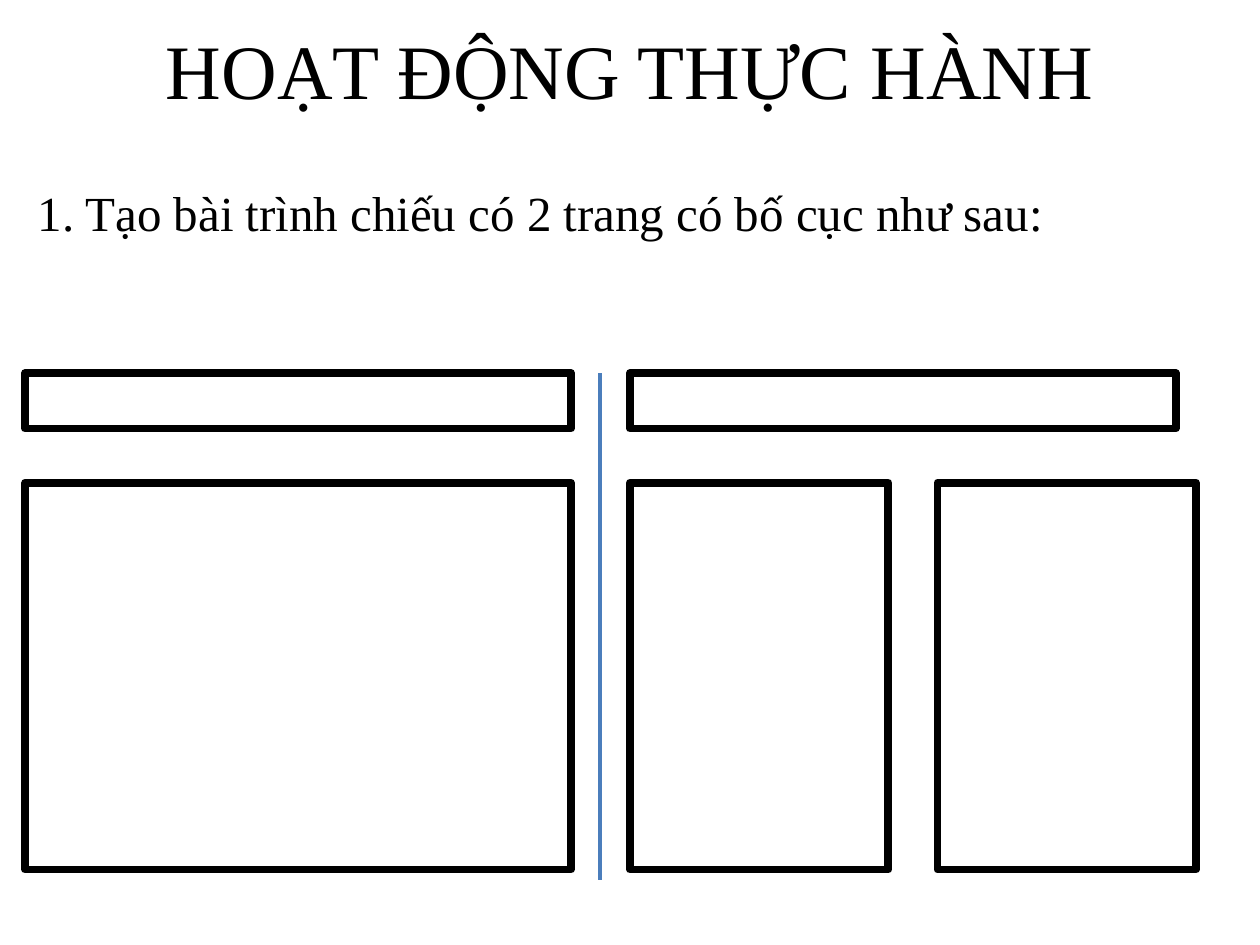
"""Build the practice slide that shows two page layouts side by side."""
from lxml import etree
from pptx import Presentation
from pptx.dml.color import RGBColor
from pptx.enum import shapes, text
from pptx.oxml import ns
from pptx.util import Cm, Pt

COLOURS = {"ink": "000000", "divider": "4B7EBC"}


def add_text(page, words, left, top, width, height, size, align):
    box = page.shapes.add_textbox(Cm(left), Cm(top), Cm(width), Cm(height))
    box.text_frame.word_wrap = True
    box.text_frame.vertical_anchor = text.MSO_ANCHOR.TOP
    para = box.text_frame.paragraphs[0]
    para.alignment = align
    span = para.add_run()
    span.text = words
    span.font.name = "Times New Roman"
    span.font.size = Pt(size)
    span.font.color.rgb = RGBColor.from_string(COLOURS["ink"])


deck = Presentation()
deck.slide_width, deck.slide_height = Cm(25.4), Cm(19.05)
page = deck.slides.add_slide(deck.slide_layouts[6])

header_top, header_height = 7.52, 1.12
body_top, body_height = 9.73, 7.8
left_page, right_page = 0.51, 12.7
full_width, column_width, column_step = 11, 5.21, 6.2

frames = [
    (left_page, header_top, full_width, header_height),
    (left_page, body_top, full_width, body_height),
    (right_page, header_top, full_width, header_height),
    (right_page, body_top, column_width, body_height),
    (right_page + column_step, body_top, column_width, body_height),
]
for frame in frames:
    box = page.shapes.add_shape(shapes.MSO_SHAPE.RECTANGLE, *map(Cm, frame))
    box.shadow.inherit = False
    box.fill.background()
    box.line.color.rgb = RGBColor.from_string(COLOURS["ink"])
    box.line.width = Pt(4.5)

divider = page.shapes.add_connector(
    shapes.MSO_CONNECTOR.STRAIGHT, Cm(12.09), Cm(header_top), Cm(12.09), Cm(17.73)
)
divider.line.color.rgb = RGBColor.from_string(COLOURS["divider"])
divider.line.width = Pt(2.25)
etree.SubElement(divider._element.spPr, ns.qn("a:effectLst"))

add_text(page, "HOẠT ĐỘNG THỰC HÀNH", left=1.27, top=0.33, width=22.86,
         height=3.18, size=44, align=text.PP_ALIGN.CENTER)
add_text(page, "1. Tạo bài trình chiếu có 2 trang có bố cục như sau:", left=0.51,
         top=3.56, width=22.81, height=1.45, size=28, align=text.PP_ALIGN.LEFT)

deck.save("out.pptx")
